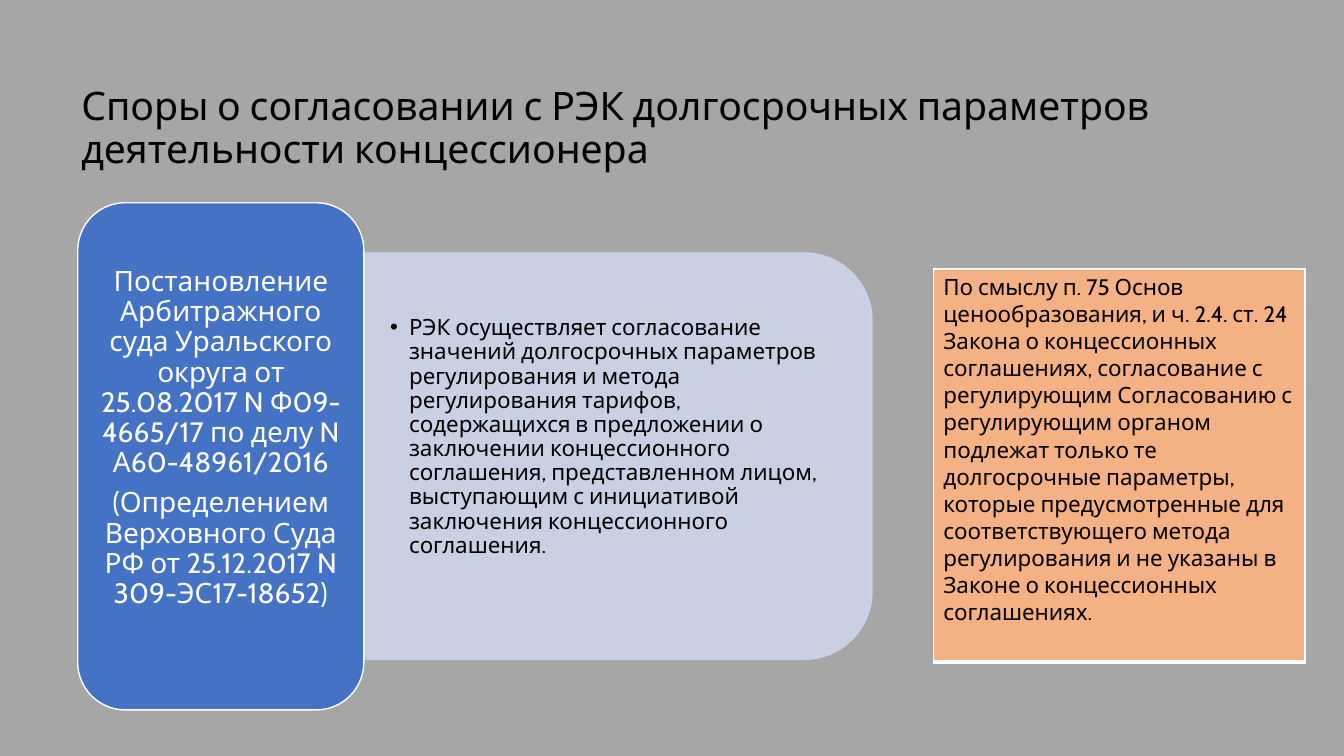
"""Build a slide on disputes over agreeing a concessionaire's long-term parameters."""
from dataclasses import dataclass

from lxml import etree
from pptx import Presentation
from pptx.dml.color import RGBColor
from pptx.enum.shapes import MSO_SHAPE
from pptx.enum.text import MSO_ANCHOR, PP_ALIGN
from pptx.oxml.ns import qn
from pptx.util import Cm, Pt

MIDDLE = MSO_ANCHOR.MIDDLE
TOP = MSO_ANCHOR.TOP
LEFT = PP_ALIGN.LEFT
CENTER = PP_ALIGN.CENTER
ROUNDED = MSO_SHAPE.ROUNDED_RECTANGLE
TWO_ROUNDED = MSO_SHAPE.ROUND_2_SAME_RECTANGLE


@dataclass(frozen=True)
class Theme:
    font: str = "Cabin"
    background: str = "A6A6A6"
    panel: str = "CFD5EA"
    ruling: str = "4472C4"
    note: str = "F4B183"
    dark: str = "000000"
    light: str = "FFFFFF"
    title_size: int = 28
    ruling_size: int = 20
    body_size: int = 16


theme = Theme()


def write_text(frame, texts, size, color, frame_format, paragraph_format):
    for name, value in frame_format.items():
        setattr(frame, name, value)
    for index, text in enumerate(texts):
        paragraph = frame.add_paragraph() if index else frame.paragraphs[0]
        for name, value in paragraph_format.items():
            setattr(paragraph, name, value)
        run = paragraph.add_run()
        run.text = text
        run.font.name = theme.font
        run.font.size = Pt(size)
        run.font.color.rgb = RGBColor.from_string(color)


def add_block(slide, kind, box, fill, line):
    shape = slide.shapes.add_shape(kind, *map(Cm, box))
    shape.shadow.inherit = False
    shape.fill.solid()
    shape.fill.fore_color.rgb = RGBColor.from_string(fill)
    shape.line.color.rgb = RGBColor.from_string(line)
    shape.line.width = Pt(1)
    return shape


presentation = Presentation()
presentation.slide_width = Cm(33.87)
presentation.slide_height = Cm(19.05)
slide = presentation.slides.add_slide(presentation.slide_layouts[6])
slide.background.fill.solid()
slide.background.fill.fore_color.rgb = RGBColor.from_string(theme.background)

title = slide.shapes.add_textbox(Cm(1.8), Cm(1.42), Cm(29.21), Cm(3.68))
write_text(
    title.text_frame,
    ["Споры о согласовании с РЭК долгосрочных параметров деятельности концессионера"],
    theme.title_size,
    theme.dark,
    {"word_wrap": True, "vertical_anchor": MIDDLE},
    {"alignment": LEFT, "line_spacing": 0.9},
)

panel = add_block(slide, TWO_ROUNDED, (10.44, 5.08, 10.24, 12.83), theme.panel, theme.panel)
panel.rotation = 90
for color in panel._element.spPr.iter(qn("a:srgbClr")):
    etree.SubElement(color, qn("a:alpha"), val="90000")

position = slide.shapes.add_textbox(Cm(9.14), Cm(6.88), Cm(12.32), Cm(9.22))
write_text(
    position.text_frame,
    [
        "РЭК осуществляет согласование значений долгосрочных параметров регулирования "
        "и метода регулирования тарифов, содержащихся в предложении о заключении "
        "концессионного соглашения, представленном лицом, выступающим с инициативой "
        "заключения концессионного соглашения."
    ],
    theme.body_size,
    theme.dark,
    {
        "word_wrap": True,
        "vertical_anchor": MIDDLE,
        "margin_left": Cm(0.69),
        "margin_right": Cm(0.69),
        "margin_top": Cm(0.36),
        "margin_bottom": Cm(1.3),
    },
    {"alignment": LEFT, "line_spacing": 0.9},
)
bullet_properties = position.text_frame.paragraphs[0]._p.get_or_add_pPr()
bullet_properties.set("marL", str(Cm(0.48)))
bullet_properties.set("indent", str(-Cm(0.48)))
etree.SubElement(bullet_properties, qn("a:buFont"), typeface="Arial")
etree.SubElement(bullet_properties, qn("a:buChar"), char="•")

ruling = add_block(slide, ROUNDED, (1.96, 5.11, 7.21, 12.78), theme.ruling, theme.light)
write_text(
    ruling.text_frame,
    [
        "Постановление Арбитражного суда Уральского округа от 25.08.2017 "
        "N Ф09-4665/17 по делу N А60-48961/2016",
        "(Определением Верховного Суда РФ от 25.12.2017 N 309-ЭС17-18652)",
    ],
    theme.ruling_size,
    theme.light,
    {
        "word_wrap": True,
        "vertical_anchor": MIDDLE,
        "margin_left": Cm(0.2),
        "margin_right": Cm(0.2),
        "margin_top": Cm(0.1),
        "margin_bottom": Cm(1.0),
    },
    {"alignment": CENTER, "line_spacing": 0.9, "space_after": Pt(7)},
)

note_frame = slide.shapes.add_table(1, 1, Cm(23.52), Cm(6.78), Cm(9.37), Cm(9.9))
note_table = note_frame.table
note_table.first_row = False
note_table.horz_banding = False
note = note_table.cell(0, 0)
note.fill.solid()
note.fill.fore_color.rgb = RGBColor.from_string(theme.note)
note.vertical_anchor = TOP
write_text(
    note.text_frame,
    [
        "По смыслу п. 75 Основ ценообразования, и ч. 2.4. ст. 24 Закона о концессионных "
        "соглашениях, согласование с регулирующим Согласованию с регулирующим органом "
        "подлежат только те долгосрочные параметры, которые предусмотренные для "
        "соответствующего метода регулирования и не указаны в Законе о концессионных "
        "соглашениях."
    ],
    theme.body_size,
    theme.dark,
    {"word_wrap": True},
    {"alignment": LEFT},
)
cell_properties = note._tc.get_or_add_tcPr()
for index, (side, width) in enumerate({"L": 1, "R": 1, "T": 1, "B": 3}.items()):
    border = etree.Element(qn(f"a:ln{side}"), w=str(Pt(width)))
    border_fill = etree.SubElement(border, qn("a:solidFill"))
    etree.SubElement(border_fill, qn("a:srgbClr"), val=theme.light)
    cell_properties.insert(index, border)

presentation.save("out.pptx")
